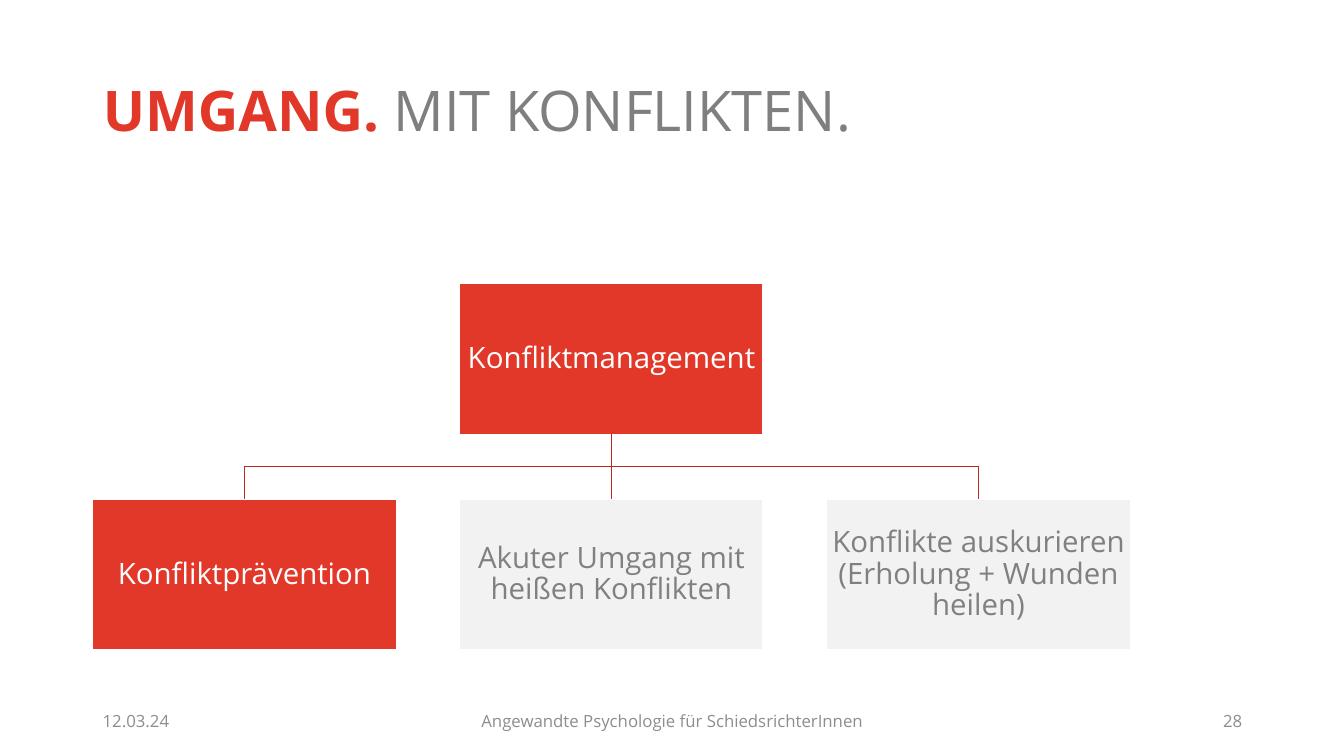
import pptx
import pptx.util
import pptx.dml.color
import pptx.enum.shapes
import pptx.enum.text
import lxml.etree
from dataclasses import dataclass

Inch = pptx.util.Inches
Align = pptx.enum.text.PP_ALIGN


@dataclass
class Theme:
    font: str = "Open Sans"
    red: str = "E2382A"
    dark: str = "B52D22"
    pale: str = "F2F2F2"
    white: str = "FFFFFF"
    gray: str = "7F7F7F"
    text: str = "808080"
    foot: str = "8D8D8D"
    head: int = 40
    body: int = 21
    small: int = 12
    line: int = 1


@dataclass
class Grid:
    left: float = 0.92
    top: float = 2.81
    col: float = 3.64
    row: float = 2.14
    wide: float = 3.01
    high: float = 1.5

    def place(self, col, row):
        return [Inch(v) for v in (self.left + col * self.col,
                                  self.top + row * self.row,
                                  self.wide, self.high)]


class Deck:
    def __init__(self, theme, grid):
        self.theme = theme
        self.grid = grid
        self.file = pptx.Presentation()
        self.file.slide_width = Inch(13.33)
        self.file.slide_height = Inch(7.5)
        self.slide = self.file.slides.add_slide(self.file.slide_layouts[5])
        self.shapes = self.slide.shapes

    def color(self, name):
        return pptx.dml.color.RGBColor.from_string(getattr(self.theme, name))

    def style(self, run, size, color, bold=False):
        run.font.name = self.theme.font
        run.font.size = pptx.util.Pt(size)
        run.font.bold = bold
        run.font.color.rgb = self.color(color)

    def stroke(self, shape, color):
        shape.line.color.rgb = self.color(color)
        shape.line.width = pptx.util.Pt(self.theme.line)

    def frame(self, shape, align):
        frame = shape.text_frame
        frame.word_wrap = True
        frame.auto_size = pptx.enum.text.MSO_AUTO_SIZE.NONE
        frame.vertical_anchor = pptx.enum.text.MSO_ANCHOR.MIDDLE
        frame.paragraphs[0].alignment = align
        return frame

    def title(self, key, rest):
        shape = self.shapes.title
        shape.left, shape.top = Inch(self.grid.left), Inch(0.4)
        shape.width, shape.height = Inch(10.29), Inch(1.45)
        para = self.frame(shape, Align.LEFT).paragraphs[0]
        para.line_spacing = 0.9
        for words, color, bold in ((key, "red", True), (rest, "gray", False)):
            run = para.add_run()
            run.text = words
            self.style(run, self.theme.head, color, bold)

    def box(self, words, col, row, fill, color):
        shape = self.shapes.add_shape(
            pptx.enum.shapes.MSO_SHAPE.RECTANGLE, *self.grid.place(col, row))
        shape.shadow.inherit = False
        shape.fill.solid()
        shape.fill.fore_color.rgb = self.color(fill)
        self.stroke(shape, "white")
        shape.text_frame.text = words
        frame = self.frame(shape, Align.CENTER)
        frame.margin_left = frame.margin_right = Inch(0.01)
        frame.margin_top = frame.margin_bottom = Inch(0.01)
        para = frame.paragraphs[0]
        para.line_spacing = 0.9
        self.style(para.runs[0], self.theme.body, color)
        return shape

    def link(self, top, low):
        start = top.left + top.width // 2, top.top + top.height
        end = low.left + low.width // 2, low.top
        if start[0] == end[0]:
            line = self.shapes.add_connector(
                pptx.enum.shapes.MSO_CONNECTOR.STRAIGHT, *start, *end)
            line.begin_connect(top, 2)
            line.end_connect(low, 0)
            lxml.etree.SubElement(line._element.spPr,
                                  pptx.oxml.ns.qn("a:effectLst"))
        else:
            mid = (start[1] + end[1]) // 2
            path = self.shapes.build_freeform(*start)
            path.add_line_segments(
                [(start[0], mid), (end[0], mid), end], close=False)
            line = path.convert_to_shape()
            line.shadow.inherit = False
            line.fill.background()
        self.stroke(line, "dark")

    def note(self, words, left, wide, align):
        shape = self.shapes.add_textbox(
            Inch(left), Inch(6.95), Inch(wide), Inch(0.4))
        shape.text_frame.text = words
        frame = self.frame(shape, align)
        self.style(frame.paragraphs[0].runs[0], self.theme.small, "foot")


def main():
    deck = Deck(Theme(), Grid())
    deck.title("UMGANG. ", "MIT KONFLIKTEN.")
    root = deck.box("Konfliktmanagement", 1, 0, "red", "white")
    leaves = (
        ("Konfliktprävention", "red", "white"),
        ("Akuter Umgang mit heißen Konflikten", "pale", "text"),
        ("Konflikte auskurieren (Erholung + Wunden heilen)", "pale", "text"),
    )
    for col, (words, fill, color) in enumerate(leaves):
        deck.link(root, deck.box(words, col, 1, fill, color))
    deck.note("12.03.24", 0.92, 3, Align.LEFT)
    deck.note("Angewandte Psychologie für SchiedsrichterInnen",
              4.42, 4.5, Align.CENTER)
    deck.note("28", 9.42, 3, Align.RIGHT)
    deck.file.save("out.pptx")


if __name__ == "__main__":
    main()
